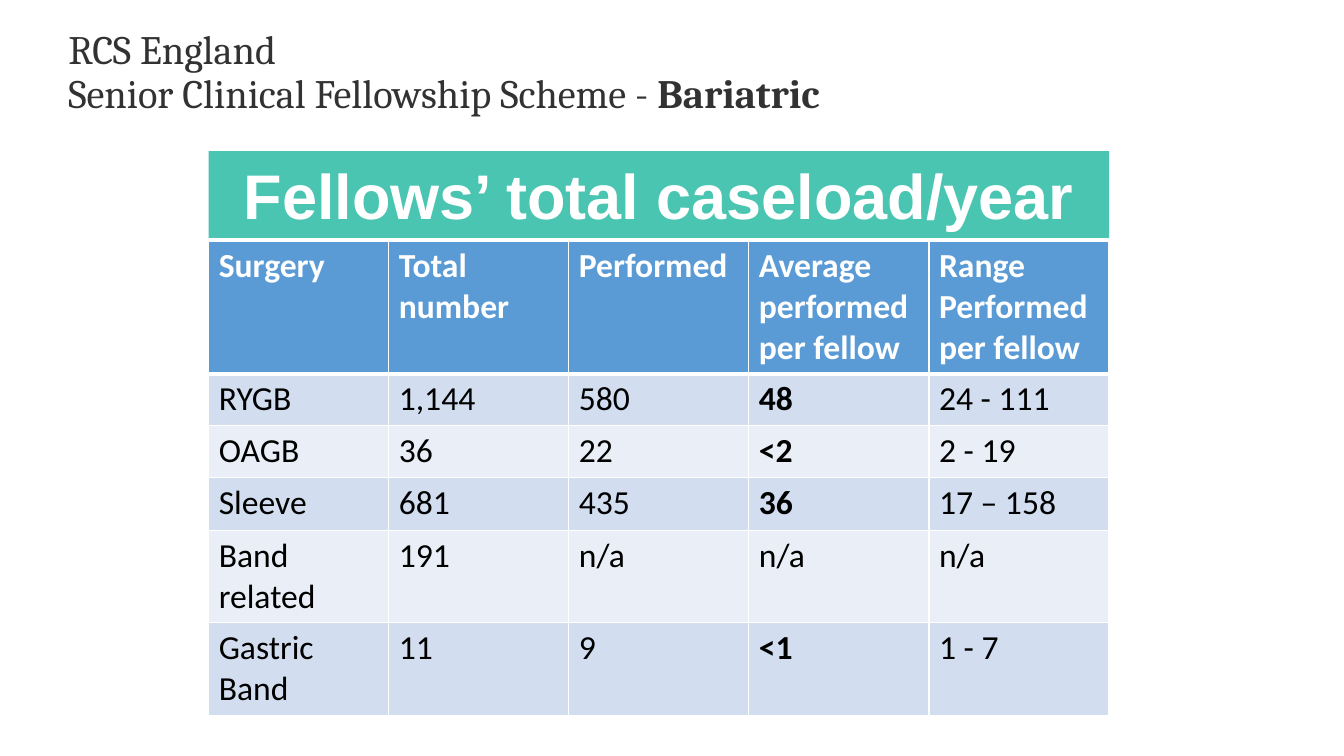
from lxml.etree import SubElement
from pptx import Presentation
from pptx.dml.color import RGBColor
from pptx.enum.shapes import MSO_SHAPE
from pptx.enum.text import MSO_ANCHOR, PP_ALIGN
from pptx.oxml.ns import qn
from pptx.util import Pt

PX = 9144  # 100 px to the inch
COLORS = {
    "title": "323232",
    "banner": "49C5B1",
    "header": "5B9BD5",
    "band_dark": "D2DEEF",
    "band_light": "EAEFF7",
    "white": "FFFFFF",
    "black": "000000",
}
HEADERS = ["Surgery", "Total number", "Performed",
           "Average performed per fellow", "Range\nPerformed per fellow"]
CASELOADS = [
    ["RYGB", "1,144", "580", "48", "24 - 111"],
    ["OAGB", "36", "22", "<2", "2 - 19"],
    ["Sleeve", "681", "435", "36", "17 – 158"],
    ["Band related", "191", "n/a", "n/a", "n/a"],
    ["Gastric Band", "11", "9", "<1", "1 - 7"],
]
ROW_HEIGHTS = [132, 51, 52, 52, 92, 92]
AVERAGE_COLUMN = 3


def to_emu(box):
    return [length * PX for length in box]


def color(name):
    return RGBColor.from_string(COLORS[name])


def add_run(paragraph, text, font_name, size, color_name, bold=False):
    run = paragraph.add_run()
    run.text = text
    run.font.name = font_name
    run.font.size = Pt(size)
    run.font.bold = bold
    run.font.color.rgb = color(color_name)


def add_title(slide, box):
    frame = slide.shapes.add_textbox(*to_emu(box)).text_frame
    frame.word_wrap = True
    frame.vertical_anchor = MSO_ANCHOR.MIDDLE
    paragraph = frame.paragraphs[0]
    paragraph.line_spacing = 0.9
    style = ("Cambria", 28.8, "title")
    add_run(paragraph, "RCS England", *style)
    paragraph.add_line_break()
    add_run(paragraph, "Senior Clinical Fellowship Scheme - ", *style)
    add_run(paragraph, "Bariatric", *style, bold=True)


def add_banner(slide, box):
    shape = slide.shapes.add_shape(MSO_SHAPE.RECTANGLE, *to_emu(box))
    shape.shadow.inherit = False
    shape.fill.solid()
    shape.fill.fore_color.rgb = color("banner")
    shape.line.fill.background()
    frame = shape.text_frame
    frame.word_wrap = True
    frame.vertical_anchor = MSO_ANCHOR.TOP
    paragraph = frame.paragraphs[0]
    paragraph.alignment = PP_ALIGN.CENTER
    add_run(paragraph, "Fellows’ total caseload/year", "Arial", 45, "white", bold=True)


def set_borders(cell, bottom_width, top_width):
    properties = cell._tc.get_or_add_tcPr()
    widths = {"a:lnL": 1, "a:lnR": 1, "a:lnT": top_width, "a:lnB": bottom_width}
    for tag, width in widths.items():
        line = SubElement(properties, qn(tag), w=str(Pt(width)))
        fill = SubElement(line, qn("a:solidFill"))
        SubElement(fill, qn("a:srgbClr"), val=COLORS["white"])


def fill_cell(cell, text, fill_name, text_color, bold):
    cell.fill.solid()
    cell.fill.fore_color.rgb = color(fill_name)
    frame = cell.text_frame
    for index, line in enumerate(text.split("\n")):
        paragraph = frame.add_paragraph() if index else frame.paragraphs[0]
        add_run(paragraph, line, "Calibri", 24, text_color, bold)


def add_caseload_table(slide, box):
    rows = [HEADERS] + CASELOADS
    table = slide.shapes.add_table(len(rows), len(HEADERS), *to_emu(box)).table
    for row, height in zip(table.rows, ROW_HEIGHTS):
        row.height = height * PX
    for row_index, texts in enumerate(rows):
        is_header = row_index == 0
        band = "band_dark" if row_index % 2 else "band_light"
        for column_index, text in enumerate(texts):
            cell = table.cell(row_index, column_index)
            set_borders(cell, bottom_width=3 if is_header else 1,
                        top_width=3 if row_index == 1 else 1)
            is_average = column_index == AVERAGE_COLUMN and text != "n/a"
            fill_cell(cell, text, "header" if is_header else band,
                      "white" if is_header else "black", is_header or is_average)


def main():
    presentation = Presentation()
    presentation.slide_width, presentation.slide_height = to_emu((1333, 750))
    slide = presentation.slides.add_slide(presentation.slide_layouts[6])
    add_title(slide, (58, 22, 946, 102))
    add_caseload_table(slide, (207, 239, 893, sum(ROW_HEIGHTS)))
    add_banner(slide, (207, 150, 893, 86))
    presentation.save("out.pptx")


if __name__ == "__main__":
    main()
